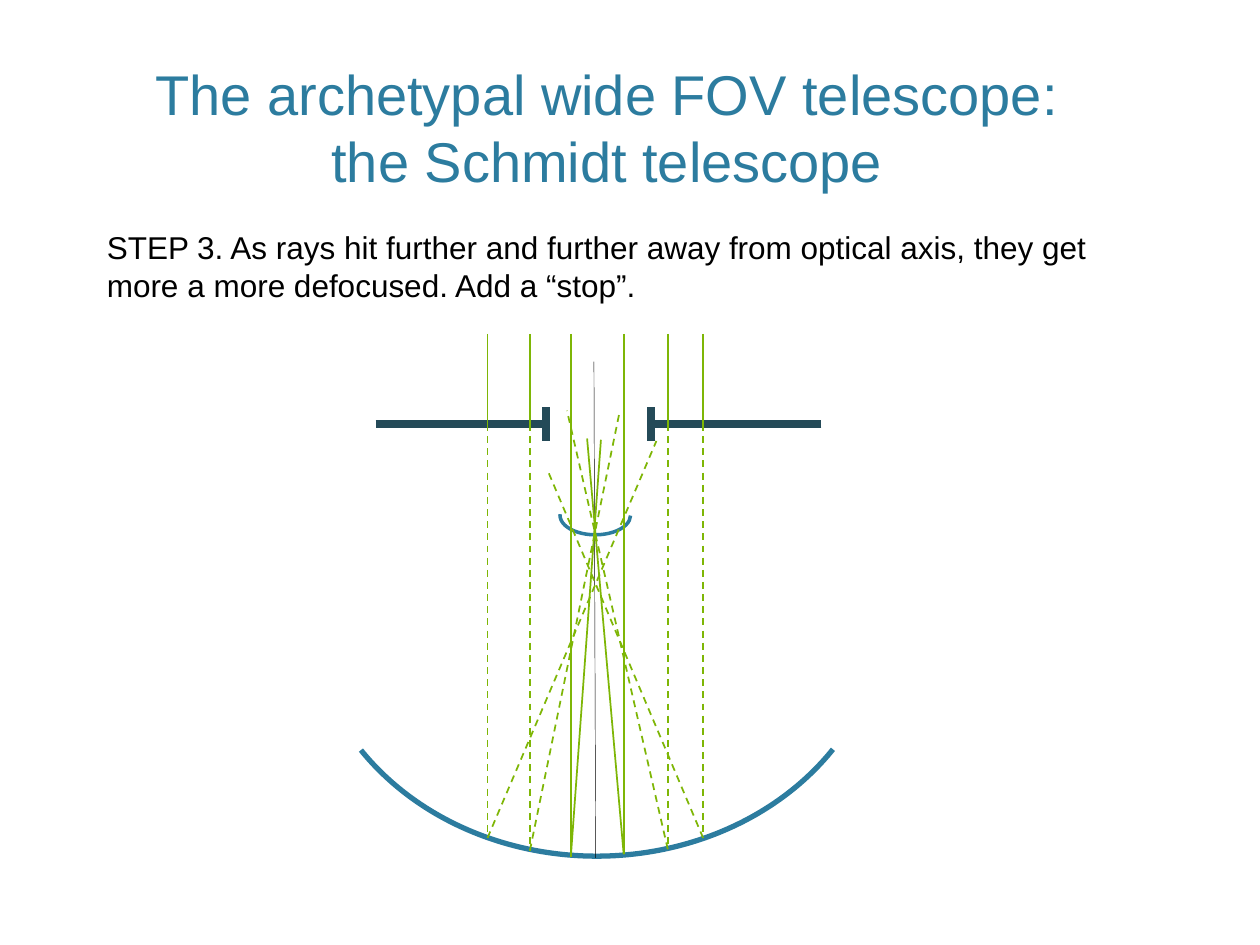
from lxml import etree
from pptx import Presentation
from pptx.dml.color import RGBColor
from pptx.enum.dml import MSO_LINE
from pptx.enum.shapes import MSO_CONNECTOR, MSO_SHAPE
from pptx.enum.text import MSO_ANCHOR, MSO_AUTO_SIZE, PP_ALIGN
from pptx.oxml.ns import qn
from pptx.util import Pt

STRAIGHT, ARC, DASH = MSO_CONNECTOR.STRAIGHT, MSO_SHAPE.ARC, MSO_LINE.DASH
BOTTOM, TOP = MSO_ANCHOR.BOTTOM, MSO_ANCHOR.TOP
NO_FIT, GROW = MSO_AUTO_SIZE.NONE, MSO_AUTO_SIZE.SHAPE_TO_FIT_TEXT
LEFT, CENTER = PP_ALIGN.LEFT, PP_ALIGN.CENTER

THEME = {
    "font": "Arial", "title_size": 32, "body_size": 18,
    "title": RGBColor(0x2C, 0x7C, 0x9F), "body": RGBColor(0, 0, 0),
    "mirror": RGBColor(0x2C, 0x7C, 0x9F), "ray": RGBColor(0x7E, 0xB6, 0x06),
    "axis": RGBColor(0, 0, 0), "stop": RGBColor(0x24, 0x4A, 0x58),
}

prs = Presentation()
prs.slide_width, prs.slide_height = Pt(720), Pt(540)
s = prs.slides.add_slide(prs.slide_layouts[5])


def fill_text(sp, text, role, align, frame_format):
    tf = sp.text_frame
    for name, value in frame_format.items():
        setattr(tf, name, value)
    p = tf.paragraphs[0]
    p.alignment = align
    r = p.add_run()
    r.text = text
    r.font.name = THEME["font"]
    r.font.size = Pt(THEME[role + "_size"])
    r.font.color.rgb = THEME[role]


def add_line(x1, y1, x2, y2, role="ray", width=1, dash=None):
    cx = s.shapes.add_connector(STRAIGHT, Pt(x1), Pt(y1), Pt(x2), Pt(y2))
    cx.line.color.rgb = THEME[role]
    cx.line.width = Pt(width)
    cx.line.dash_style = dash
    etree.SubElement(cx._element.spPr, qn("a:effectLst"))


# Title and explanation
title = s.shapes.title
title.left, title.top, title.width, title.height = Pt(64), Pt(35.3), Pt(566), Pt(79.2)
fill_text(title, "The archetypal wide FOV telescope: the Schmidt telescope", "title", CENTER,
          {"word_wrap": True, "auto_size": NO_FIT, "vertical_anchor": BOTTOM})
step = s.shapes.add_textbox(Pt(54), Pt(126.7), Pt(576), Pt(51))
fill_text(step, "STEP 3. As rays hit further and further away from optical axis, "
          "they get more a more defocused. Add a “stop”.", "body", LEFT,
          {"word_wrap": True, "auto_size": GROW, "vertical_anchor": TOP})

# Focal surface and primary mirror: box, arc start and end, line width
for x, y, w, h, start, end, width in [
    (329, 274.3, 22.3, 40.3, 162.32, 55.03, 2),
    (199.4, 183.6, 283, 328.3, 180.47, 35.4, 3),
]:
    sp = s.shapes.add_shape(ARC, Pt(x), Pt(y), Pt(w), Pt(h))
    sp.rotation = 90
    sp.adjustments[0], sp.adjustments[1] = start, end
    sp.shadow.inherit = False
    sp.fill.background()
    sp.line.color.rgb = THEME["mirror"]
    sp.line.width = Pt(width)

# Stop: a plate on each side with a lip at its inner edge
STOP_Y = 242.3
for outer, inner in [(214.6, 311.8), (469.4, 372.2)]:
    add_line(outer, STOP_Y, inner, STOP_Y, "stop", 4.5)
    add_line(inner, 232.6, inner, 252, "stop", 4.5)

# Optical axis
add_line(339.4, 206.6, 340.4, 490.3, "axis", 0.25)

# Rays: x of arrival, y at the mirror, end after reflection, blocked by the stop
RAY_TOP = 190.8
for x, mirror_y, end_x, end_y, blocked in [
    (278.6, 478.8, 375.1, 252, True),
    (302.8, 486, 354.2, 234.7, True),
    (326.2, 489.6, 343.4, 251.3, False),
    (356.4, 488.2, 335.5, 250.6, False),
    (381.6, 485.3, 324, 234.7, True),
    (401.8, 478.8, 312.5, 267.8, True),
]:
    dash = DASH if blocked else None
    if blocked:
        add_line(x, RAY_TOP, x, STOP_Y)
    add_line(x, STOP_Y if blocked else RAY_TOP, x, mirror_y, dash=dash)
    add_line(x, mirror_y, end_x, end_y, dash=dash)

prs.save("out.pptx")
